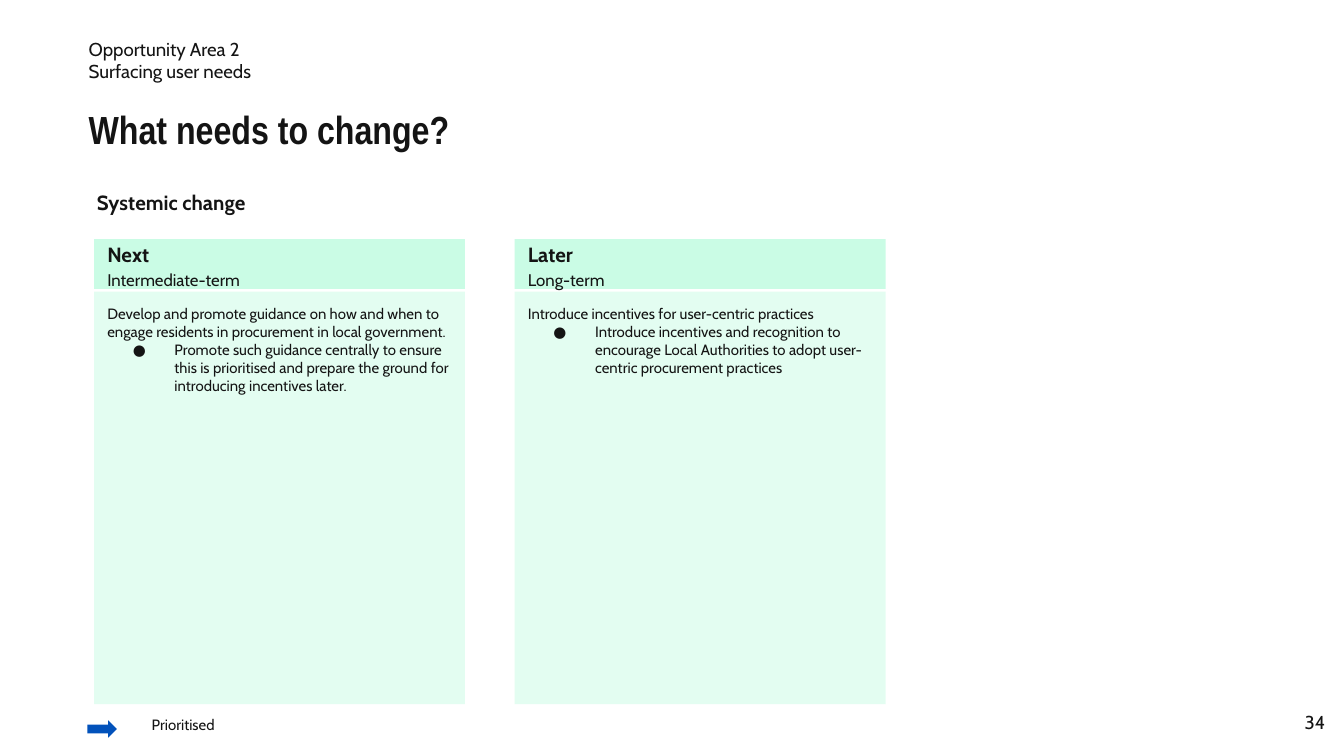
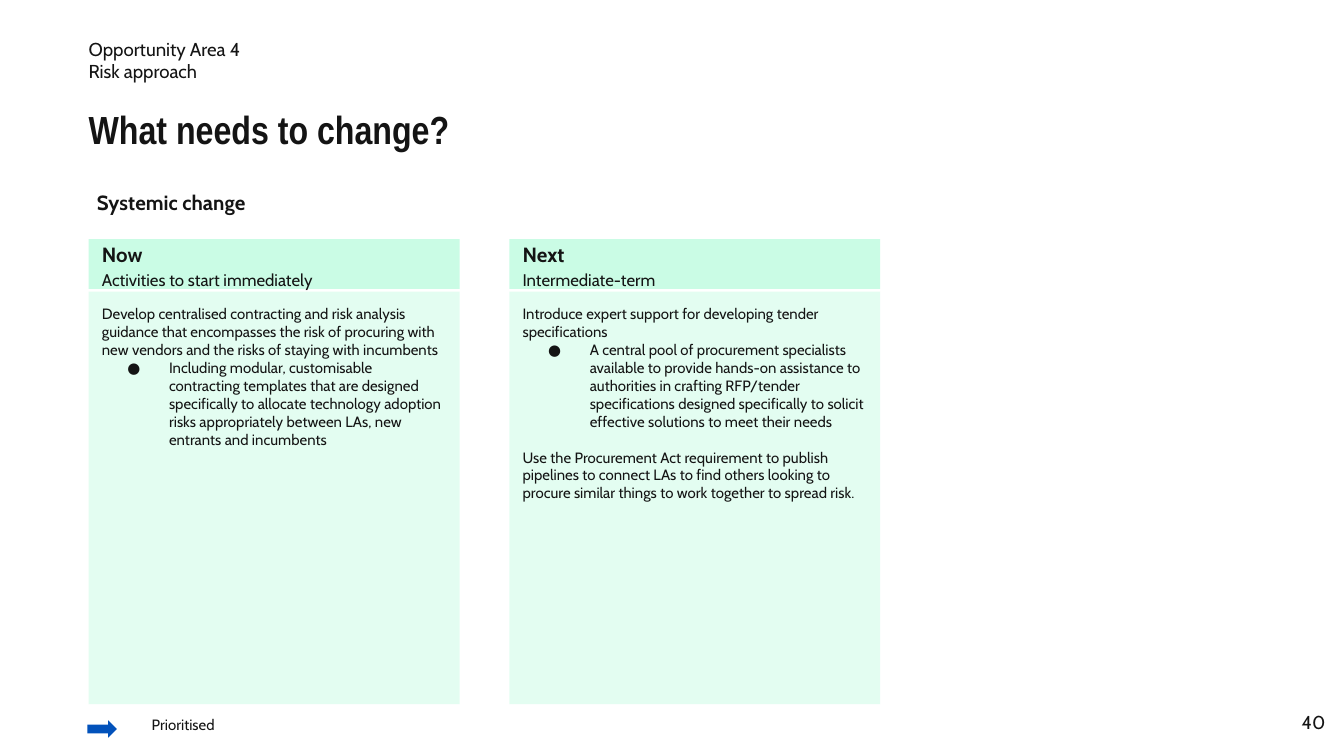
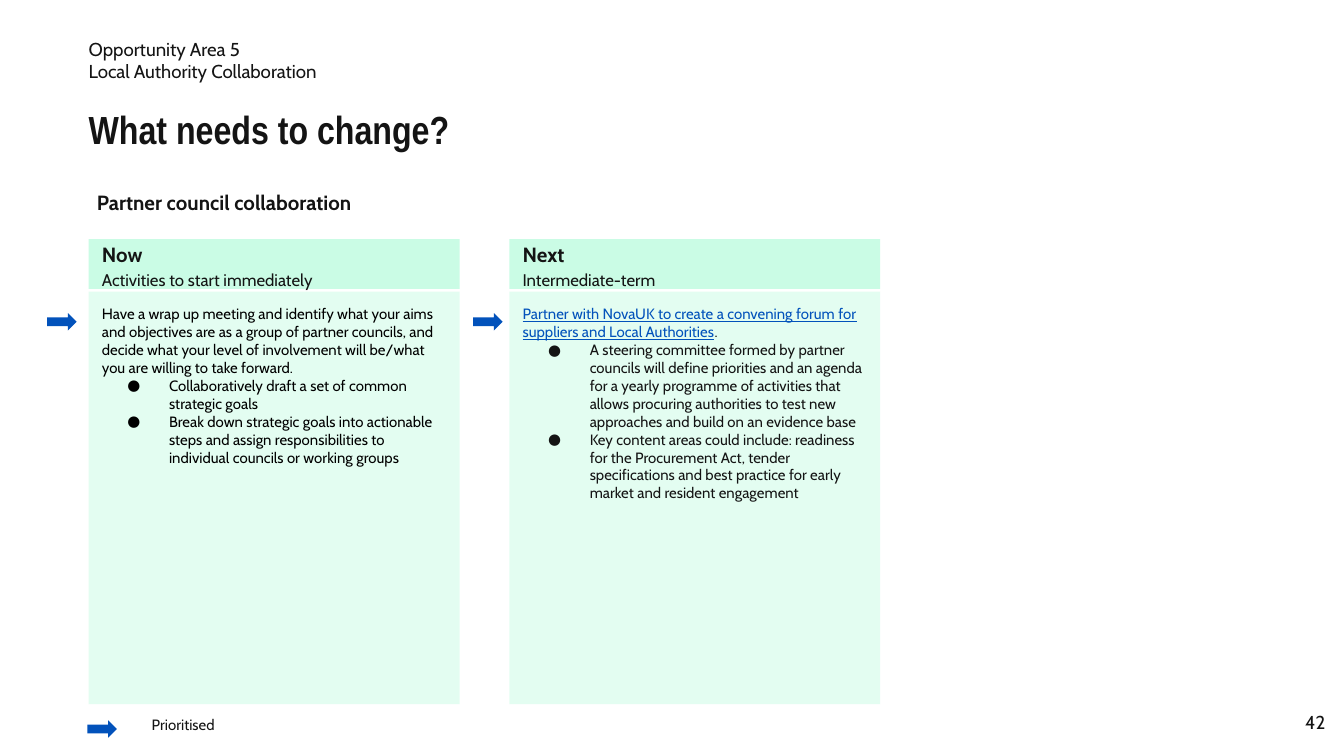
from lxml.etree import SubElement
from pptx import Presentation
from pptx.dml.color import RGBColor
from pptx.enum.shapes import MSO_SHAPE as Preset
from pptx.enum.text import MSO_ANCHOR as Anchor, MSO_AUTO_SIZE as AutoSize, PP_ALIGN as Align
from pptx.oxml.ns import qn
from pptx.util import Inches, Pt

# Shared style
COLOURS = {"ink": "141414", "black": "000000", "mint": "CAFCE5", "blue": "0252BB"}
FONTS = {
    "title": {"name": "Arial Narrow", "size": Pt(21), "bold": True},
    "heading": {"name": "Cabin", "size": Pt(11), "bold": True},
    "label": {"name": "Cabin", "size": Pt(10), "bold": False},
    "term": {"name": "Cabin", "size": Pt(9), "bold": False},
    "detail": {"name": "Cabin", "size": Pt(8), "bold": False},
}
PLAIN = {"alignment": Align.LEFT, "space_before": Pt(0), "space_after": Pt(0), "line_spacing": 1.0}
COLUMN_WIDTH, COLUMN_PITCH = 2.76, 3.13
HEADER_TOP, HEADER_HEIGHT = 1.78, 0.37
CARD_TOP, CARD_HEIGHT = 2.17, 3.07
ACTION_ARROW_TOP = 2.33


def apply(target, values):
    for name, value in values.items():
        setattr(target, name, value)


class ChangeDeck:
    """Holds the deck, its style and the slide being built."""

    def __init__(self):
        self.deck = Presentation()
        width = Inches(10)
        apply(self.deck, {"slide_width": width, "slide_height": width * 9 // 16})
        self.page = None

    def new_page(self):
        self.page = self.deck.slides.add_slide(self.deck.slide_layouts[3])

    def frame(self, box, side=0.1, anchor=Anchor.TOP):
        frame = box.text_frame
        apply(frame, {
            "word_wrap": True, "auto_size": AutoSize.NONE, "vertical_anchor": anchor,
            "margin_left": Inches(side), "margin_right": Inches(side),
            "margin_top": Inches(0.1), "margin_bottom": Inches(0.1),
        })
        return frame

    def para(self, frame, text, font, colour="ink", bullet=False, link="", **layout):
        first = frame.paragraphs[0]
        para = first if not first.runs else frame.add_paragraph()
        apply(para, PLAIN | layout)
        props = para._p.get_or_add_pPr()
        props.set("marL", str(Inches(0.5 if bullet else 0)))
        props.set("indent", str(Inches(-0.31 if bullet else 0)))
        if bullet:
            tint = SubElement(props, qn("a:buClr"))
            SubElement(tint, qn("a:srgbClr"), val=COLOURS[colour])
            SubElement(props, qn("a:buFont"), typeface=FONTS[font]["name"])
            SubElement(props, qn("a:buChar"), char="●")
        else:
            SubElement(props, qn("a:buNone"))
        if link:
            self.span(para, link, font, "blue", underline=True)
        self.span(para, text, font, colour)

    def span(self, para, text, font, colour, **extra):
        span = para.add_run()
        span.text = text
        apply(span.font, FONTS[font] | extra)
        span.font.color.rgb = RGBColor.from_string(COLOURS[colour])

    def placeholder(self, index, place, lines, font, anchor=Anchor.TOP, **layout):
        box = self.page.placeholders[index]
        apply(box, dict(zip(("left", "top", "width", "height"), map(Inches, place))))
        frame = self.frame(box, 0, anchor)
        for line in lines:
            self.para(frame, line, font, **layout)

    def text(self, place, text, font, **layout):
        box = self.page.shapes.add_textbox(*map(Inches, place))
        self.para(self.frame(box), text, font, **layout)

    def shape(self, preset, place, colour, opacity=100):
        box = self.page.shapes.add_shape(preset, *map(Inches, place))
        box.shadow.inherit = False
        box.fill.solid()
        box.fill.fore_color.rgb = RGBColor.from_string(COLOURS[colour])
        box.line.fill.background()
        if opacity < 100:
            tint = box._element.spPr.find(qn("a:solidFill"))[0]
            SubElement(tint, qn("a:alpha"), val=str(opacity * 1000))
        return box

    def arrow(self, left, top):
        self.shape(Preset.RIGHT_ARROW, (left, top, 0.22, 0.13), "blue")

    def column(self, left, heading, term, actions, ink="ink", arrow_left=None):
        header = self.shape(Preset.RECTANGLE, (left, HEADER_TOP, COLUMN_WIDTH, HEADER_HEIGHT), "mint")
        frame = self.frame(header, anchor=Anchor.MIDDLE)
        self.para(frame, heading, "heading", line_spacing=1.15)
        self.para(frame, term, "term", line_spacing=1.15)

        card = self.shape(Preset.RECTANGLE, (left, CARD_TOP, COLUMN_WIDTH, CARD_HEIGHT), "mint", 51)
        frame = self.frame(card)
        for action in actions:
            self.para(frame, font="detail", colour=ink, **action)
        if arrow_left is not None:
            self.arrow(arrow_left, ACTION_ARROW_TOP)

    def change_page(self, number, area, section, left, columns):
        self.new_page()
        # Titles
        self.placeholder(0, (0.66, 0.68, 5.19, 0.5), ["What needs to change?"], "title", space_after=Pt(10))
        self.placeholder(1, (0.72, 1.31, 6.62, 0.37), [section], "heading", space_before=Pt(12))
        self.placeholder(2, (0.66, 0.21, 4.73, 0.47), area, "label", Anchor.MIDDLE)
        # Time horizons
        for place, column in enumerate(columns):
            self.column(left + place * COLUMN_PITCH, **column)
        # Key and page number
        self.arrow(0.65, 5.36)
        self.text((1.03, 5.26, 0.81, 0.13), "Prioritised", "detail")
        self.text((9.36, 5.19, 0.6, 0.43), number, "label", alignment=Align.RIGHT)


# Content
NOW = {"heading": "Now", "term": "Activities to start immediately"}
NEXT = {"heading": "Next", "term": "Intermediate-term"}
LATER = {"heading": "Later", "term": "Long-term"}


def point(text):
    return {"text": text, "bullet": True}


PAGES = [
    {
        "number": "34", "area": ["Opportunity Area 2", "Surfacing user needs"],
        "section": "Systemic change", "left": 0.7,
        "columns": [
            NEXT | {"actions": [
                {"text": "Develop and promote guidance on how and when to engage residents in "
                         "procurement in local government."},
                point("Promote such guidance centrally to ensure this is prioritised and prepare "
                      "the ground for introducing incentives later."),
            ]},
            LATER | {"actions": [
                {"text": "Introduce incentives for user-centric practices"},
                point("Introduce incentives and recognition to encourage Local Authorities to "
                      "adopt user-centric procurement practices"),
            ]},
        ],
    },
    {
        "number": "40", "area": ["Opportunity Area 4", "Risk approach"],
        "section": "Systemic change", "left": 0.66,
        "columns": [
            NOW | {"actions": [
                {"text": "Develop centralised contracting and risk analysis guidance that "
                         "encompasses the risk of procuring with new vendors and the risks of "
                         "staying with incumbents"},
                point("Including modular, customisable contracting templates that are designed "
                      "specifically to allocate technology adoption risks appropriately between "
                      "LAs, new entrants and incumbents"),
            ]},
            NEXT | {"actions": [
                {"text": "Introduce expert support for developing tender specifications"},
                point("A central pool of procurement specialists available to provide hands-on "
                      "assistance to authorities in crafting RFP/tender specifications designed "
                      "specifically to solicit effective solutions to meet their needs"),
                {"text": "Use the Procurement Act requirement to publish pipelines to connect LAs "
                         "to find others looking to procure similar things to work together to "
                         "spread risk.", "space_before": Pt(9.6)},
            ]},
        ],
    },
    {
        "number": "42", "area": ["Opportunity Area 5", "Local Authority Collaboration"],
        "section": "Partner council collaboration", "left": 0.66,
        "columns": [
            NOW | {"ink": "black", "arrow_left": 0.35, "actions": [
                {"text": "Have a wrap up meeting and identify what your aims and objectives are "
                         "as a group of partner councils, and decide what your level of "
                         "involvement will be/what you are willing to take forward."},
                point("Collaboratively draft a set of common strategic goals"),
                point("Break down strategic goals into actionable steps and assign "
                      "responsibilities to individual councils or working groups"),
            ]},
            NEXT | {"arrow_left": 3.52, "actions": [
                {"link": "Partner with NovaUK to create a convening forum for suppliers and "
                         "Local Authorities", "text": "."},
                point("A steering committee formed by partner councils will define priorities and "
                      "an agenda for a yearly programme of activities that allows procuring "
                      "authorities to test new approaches and build on an evidence base"),
                point("Key content areas could include: readiness for the Procurement Act, tender "
                      "specifications and best practice for early market and resident engagement"),
            ]},
        ],
    },
]


def main():
    builder = ChangeDeck()
    for content in PAGES:
        builder.change_page(**content)
    builder.deck.save("out.pptx")


if __name__ == "__main__":
    main()
